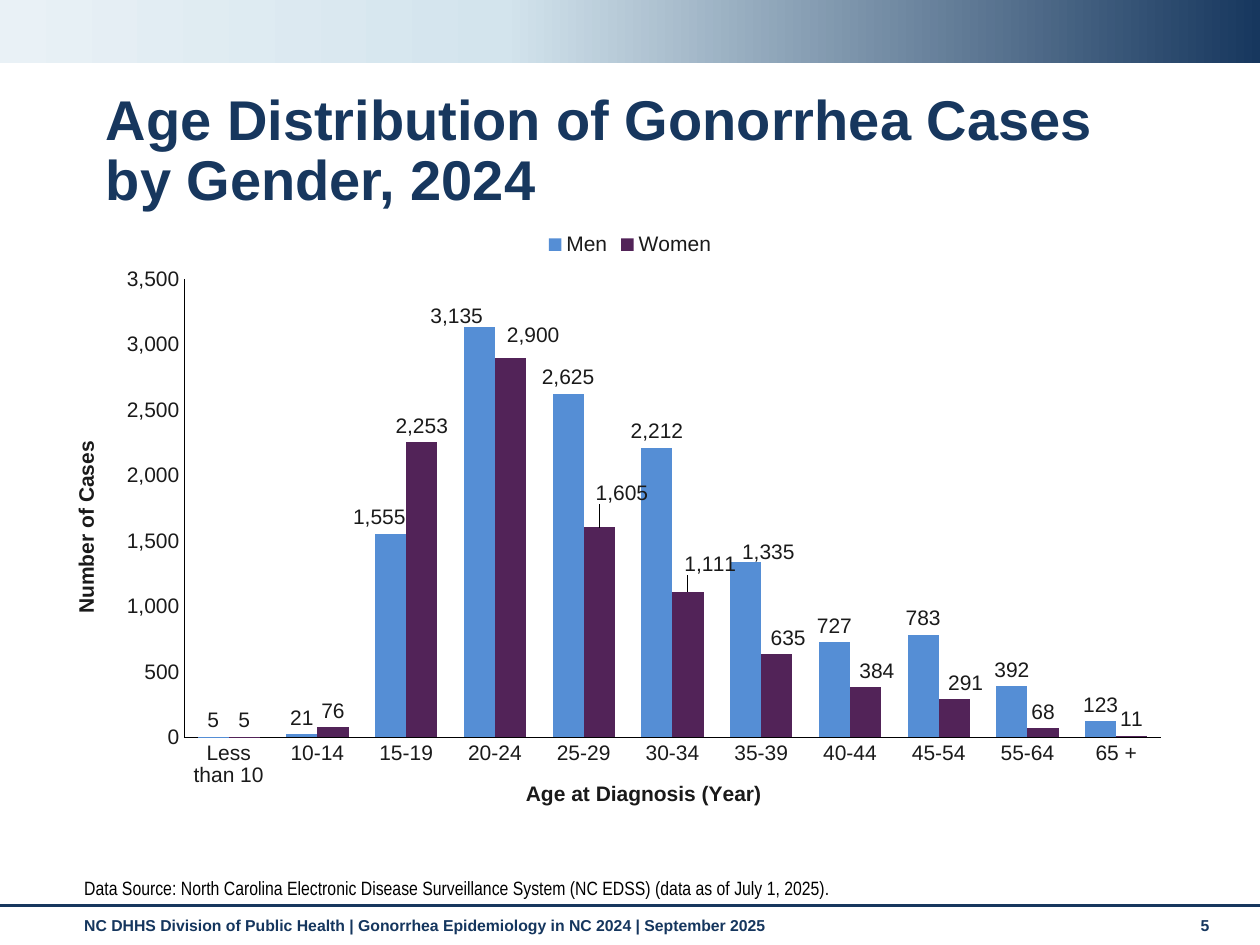
from copy import deepcopy
from dataclasses import dataclass

from pptx import Presentation
from pptx.chart.data import CategoryChartData as Data
from pptx.dml.color import RGBColor as Rgb
from pptx.enum.chart import XL_CHART_TYPE as Kind
from pptx.enum.chart import XL_LABEL_POSITION as Spot
from pptx.enum.chart import XL_LEGEND_POSITION as Side
from pptx.enum.chart import XL_TICK_MARK as Tick
from pptx.enum.shapes import MSO_CONNECTOR as Link
from pptx.enum.shapes import MSO_SHAPE as Form
from pptx.enum.text import MSO_ANCHOR as Anchor
from pptx.enum.text import MSO_AUTO_SIZE as Fit
from pptx.enum.text import PP_ALIGN as Align
from pptx.oxml import parse_xml
from pptx.oxml.ns import nsdecls, qn
from pptx.util import Inches, Pt


@dataclass(frozen=True)
class Theme:
    navy: str = "17375E"
    foot: str = "15365E"
    ink: str = "1A1A1A"
    black: str = "000000"
    men: str = "558ED5"
    women: str = "522358"
    fade: tuple = ((0, "17375E"), (0.6, "D3E4ED"), (1, "E9F1F6"))
    face: str = "Arial"
    slim: str = "Arial Narrow"
    head: int = 32
    body: int = 12
    note: int = 11
    small: int = 9


AGES = ("Less than 10", "10-14", "15-19", "20-24", "25-29", "30-34",
        "35-39", "40-44", "45-54", "55-64", "65 +")
MEN = (5, 21, 1555, 3135, 2625, 2212, 1335, 727, 783, 392, 123)
WOMEN = (5, 76, 2253, 2900, 1605, 1111, 635, 384, 291, 68, 11)
# Label shifts by point, as shares of the chart's size
MEN_MOVES = {2: (-0.01, 0), 3: (-0.02, 0.01), 6: (0.02, 0.01)}
WOMEN_MOVES = {3: (0.02, -0.01), 4: (0.02, -0.03), 5: (0.02, -0.02),
               6: (0.01, 0), 7: (0.01, 0), 8: (0.01, 0)}
PLOT = {"x": 0.107, "y": 0.101, "w": 0.861, "h": 0.774}


def layout(inner=False, **sizes):
    """Make a manual chart layout from shares of the chart's size."""
    target = '<c:layoutTarget val="inner"/>' if inner else ""
    modes = "".join(f'<c:{k}Mode val="edge"/>' for k in "xy") if inner else ""
    parts = "".join(f'<c:{k} val="{v}"/>' for k, v in sizes.items())
    return parse_xml(f'<c:layout {nsdecls("c")}><c:manualLayout>{target}'
                     f'{modes}{parts}</c:manualLayout></c:layout>')


class Deck:
    """Style and current slide; lengths are cells of a 100 by 75 grid."""

    def __init__(self, theme):
        self.theme = theme
        self.prs = Presentation()
        self.prs.slide_width, self.prs.slide_height = Inches(10), Inches(7.5)
        self.slide = self.prs.slides.add_slide(self.prs.slide_layouts[5])
        self.shapes = self.slide.shapes

    def grid(self, *cells):
        wide, high = self.prs.slide_width / 100, self.prs.slide_height / 75
        return [round(c * (high if i % 2 else wide))
                for i, c in enumerate(cells)]

    def style(self, font, size, color, bold=False, face=None):
        font.name = face or self.theme.face
        font.size, font.bold = Pt(size), bold
        font.color.rgb = Rgb.from_string(color)

    def label(self, box, text, anchor, *look):
        frame = box.text_frame
        frame.word_wrap, frame.auto_size = True, Fit.NONE
        frame.vertical_anchor = anchor
        para = frame.paragraphs[0]
        para.alignment = Align.LEFT
        run = para.add_run()
        run.text = text
        self.style(run.font, *look)
        return para

    def title(self, text, *cells):
        box = self.shapes.title
        box.left, box.top, box.width, box.height = self.grid(*cells)
        para = self.label(box, text, Anchor.TOP,
                          self.theme.head, self.theme.navy, True)
        para.line_spacing = 0.9

    def text(self, text, cells, *look, anchor=Anchor.TOP):
        box = self.shapes.add_textbox(*self.grid(*cells))
        self.label(box, text, anchor, *look)

    def band(self, *cells):
        bar = self.shapes.add_shape(Form.RECTANGLE, *self.grid(*cells))
        bar.shadow.inherit = False
        bar.line.fill.background()
        bar.fill.gradient()
        bar.fill.gradient_angle = 180
        stops = bar._element.spPr.find(".//" + qn("a:gsLst"))
        stops.append(deepcopy(stops[0]))
        for stop, (place, color) in zip(bar.fill.gradient_stops,
                                        self.theme.fade):
            stop.position = place
            stop.color.rgb = Rgb.from_string(color)

    def rule(self, *cells):
        line = self.shapes.add_connector(Link.STRAIGHT, *self.grid(*cells))
        line.line.color.rgb = Rgb.from_string(self.theme.navy)
        line.line.width = Pt(1.75)
        line._element.spPr.append(
            parse_xml(f'<a:effectLst {nsdecls("a")}/>'))

    def axis(self, axis, name):
        axis.has_major_gridlines = False
        axis.major_tick_mark = axis.minor_tick_mark = Tick.NONE
        axis.format.line.color.rgb = Rgb.from_string(self.theme.black)
        axis.format.line.width = Pt(0.75)
        run = axis.axis_title.text_frame.paragraphs[0].add_run()
        run.text = name
        self.style(run.font, self.theme.body, self.theme.ink, True)

    def series(self, item, color, moves):
        item.format.fill.solid()
        item.format.fill.fore_color.rgb = Rgb.from_string(color)
        item.invert_if_negative = False
        tags = item.data_labels
        tags.show_value, tags.position = True, Spot.OUTSIDE_END
        tags.number_format, tags.number_format_is_linked = "#,##0", False
        self.style(tags.font, self.theme.body, self.theme.ink)
        for i, (x, y) in moves.items():
            tag = item.points[i].data_label
            self.style(tag.font, self.theme.body, self.theme.ink)
            tag.position = Spot.OUTSIDE_END
            mark = tags._element.find(
                f'{qn("c:dLbl")}/{qn("c:idx")}[@val="{i}"]')
            mark.addnext(layout(x=x, y=y))

    def chart(self, names, groups, titles, *cells):
        data = Data(number_format="#,##0")
        data.categories = names
        for name, vals, _, _ in groups:
            data.add_series(name, vals)
        chart = self.shapes.add_chart(
            Kind.COLUMN_CLUSTERED, *self.grid(*cells), data).chart
        self.style(chart.font, self.theme.body, self.theme.ink)
        chart.has_title = False
        chart.has_legend = True
        chart.legend.position = Side.TOP
        chart.legend.include_in_layout = False
        # Axes
        self.axis(chart.category_axis, titles[0])
        self.axis(chart.value_axis, titles[1])
        scale = chart.value_axis
        scale.minimum_scale, scale.maximum_scale = 0, 3500
        scale.major_unit = 500
        scale.tick_labels.number_format = "#,##0"
        scale.tick_labels.number_format_is_linked = False
        # Columns
        plot = chart.plots[0]
        plot.gap_width, plot.overlap = 85, 0
        plot.vary_by_categories = False
        for item, (_, _, color, moves) in zip(plot.series, groups):
            self.series(item, color, moves)
        # Plot area
        area = chart._chartSpace.chart.plotArea
        for old in area.findall(qn("c:layout")):
            area.remove(old)
        area.insert(0, layout(True, **PLOT))


def main():
    look = Theme()
    deck = Deck(look)
    # Frame: footer, page number, top band and bottom rule
    small = (look.small, look.foot, True)
    deck.text("NC DHHS Division of Public Health | Gonorrhea Epidemiology "
              "in NC 2024 | September 2025", (5.7, 72.2, 87.4, 2.9), *small)
    deck.text("5", (94.3, 72.2, 4.4, 3), *small)
    deck.band(0, 0, 100, 5)
    deck.rule(0, 71.9, 100, 71.9)
    # Content: title, chart and source
    deck.title("Age Distribution of Gonorrhea Cases by Gender, 2024",
               7.4, 6.8, 85.8, 6)
    deck.chart(AGES, (("Men", MEN, look.men, MEN_MOVES),
                      ("Women", WOMEN, look.women, WOMEN_MOVES)),
               ("Age at Diagnosis (Year)", "Number of Cases"),
               5, 17.4, 90, 47)
    deck.text("Data Source: North Carolina Electronic Disease Surveillance "
              "System (NC EDSS) (data as of July 1, 2025).",
              (5.7, 68.3, 87.4, 3.6), look.note, look.black, False, look.slim,
              anchor=Anchor.BOTTOM)
    deck.prs.save("out.pptx")


if __name__ == "__main__":
    main()
